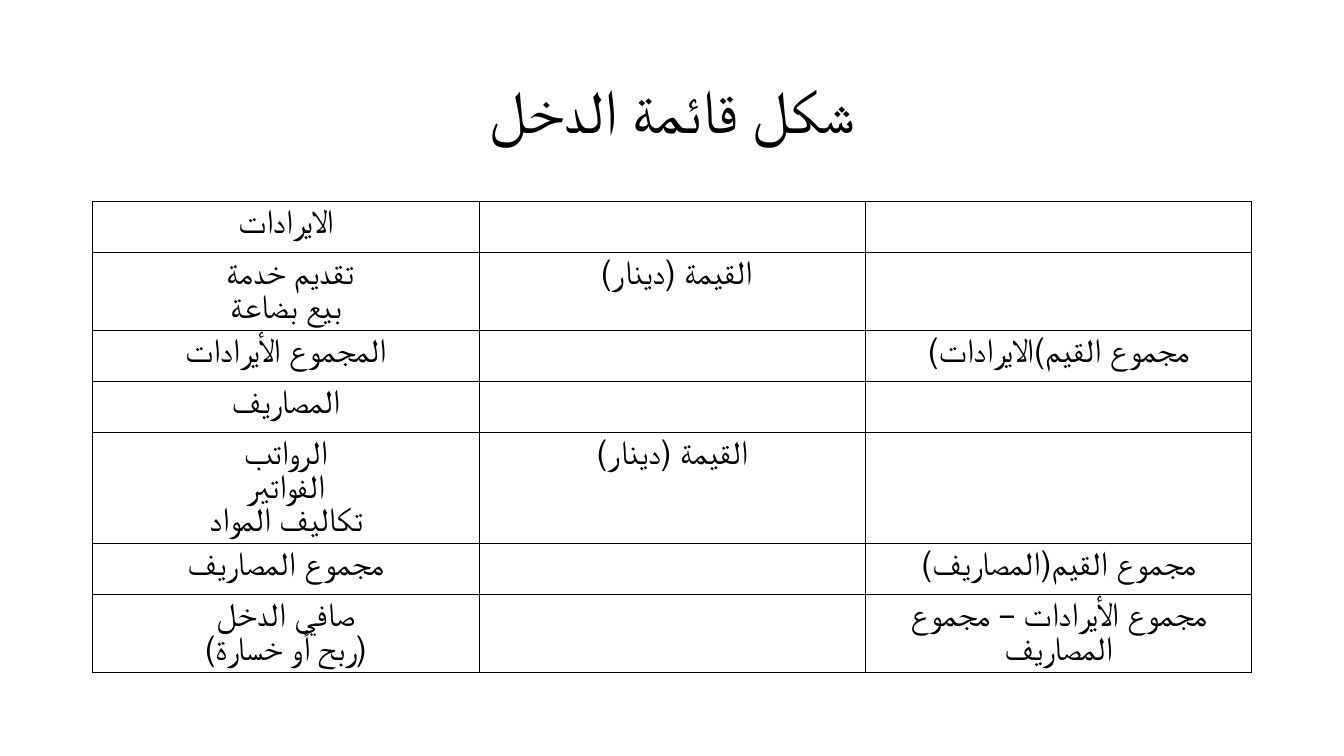
from dataclasses import dataclass
from lxml.etree import SubElement
from pptx import Presentation
from pptx.dml.color import RGBColor
from pptx.enum.text import MSO_ANCHOR as Anchor, PP_ALIGN as Align
from pptx.oxml import parse_xml
from pptx.oxml.ns import nsdecls, qn
from pptx.util import Pt

TITLE = "شكل قائمة الدخل"
STATEMENT = [
    (["الايرادات"], "", ""),
    (["تقديم خدمة ", "بيع بضاعة"], "القيمة (دينار) ", ""),
    (["المجموع الأيرادات"], "", "مجموع القيم)الايرادات)"),
    (["المصاريف"], "", ""),
    (["الرواتب", "الفواتير", "تكاليف المواد"], "القيمة (دينار)", ""),
    (["مجموع المصاريف"], "", "مجموع القيم(المصاريف)"),
    (["صافي الدخل", "(ربح أو خسارة)"], "", "مجموع الأيرادات – مجموع المصاريف"),
]


@dataclass(frozen=True)
class Theme:
    font: str = "Calibri"
    ink: str = "000000"
    title_size: int = 44
    body_size: int = 24
    border: int = 1


theme = Theme()
LEFT, WIDTH = 66.24, 828
TITLE_TOP, TITLE_HEIGHT = 28.8, 104.4
TABLE_TOP = 144
SINGLE_ROW, LINE_HEIGHT, CELL_MARGINS = 36.6, 23.9, 7.2


def format_paragraph(paragraph, size):
    paragraph.alignment = Align.CENTER
    paragraph.font.name = theme.font
    paragraph.font.size = Pt(size)
    paragraph.font.color.rgb = RGBColor.from_string(theme.ink)
    paragraph._p.get_or_add_pPr().set("rtl", "1")


def add_borders(cell):
    properties = cell._tc.get_or_add_tcPr()
    for position, side in enumerate(("lnL", "lnR", "lnT", "lnB")):
        properties.insert(position, parse_xml(
            f'<a:{side} {nsdecls("a")} w="{Pt(theme.border)}"><a:solidFill>'
            f'<a:srgbClr val="{theme.ink}"/></a:solidFill></a:{side}>'))


def fill_cell(cell, lines):
    cell.fill.background()
    add_borders(cell)
    cell.text = "\n".join(lines)
    for paragraph in cell.text_frame.paragraphs:
        format_paragraph(paragraph, theme.body_size)
        if not paragraph.runs:
            end = SubElement(paragraph._p, qn("a:endParaRPr"))
            end.set("sz", str(theme.body_size * 100))


def row_height(labels):
    return max(SINGLE_ROW, CELL_MARGINS + LINE_HEIGHT * len(labels))


def add_title(slide):
    title = slide.shapes.title
    title.left, title.top = Pt(LEFT), Pt(TITLE_TOP)
    title.width, title.height = Pt(WIDTH), Pt(TITLE_HEIGHT)
    title.text_frame.text = TITLE
    title.text_frame.vertical_anchor = Anchor.MIDDLE
    heading = title.text_frame.paragraphs[0]
    heading.line_spacing = 0.9
    format_paragraph(heading, theme.title_size)


def add_statement(slide):
    heights = [row_height(labels) for labels, _, _ in STATEMENT]
    columns = len(STATEMENT[0])
    statement = slide.shapes.add_table(
        len(STATEMENT), columns, Pt(LEFT), Pt(TABLE_TOP), Pt(WIDTH), Pt(sum(heights))).table
    statement.first_row = statement.horz_banding = False
    for row, height, (labels, value, total) in zip(statement.rows, heights, STATEMENT):
        row.height = Pt(height)
        for cell, lines in zip(row.cells, (labels, [value], [total])):
            fill_cell(cell, lines)


def main():
    deck = Presentation()
    deck.slide_width, deck.slide_height = Pt(960), Pt(540)
    slide = deck.slides.add_slide(deck.slide_layouts[5])
    add_title(slide)
    add_statement(slide)
    deck.save("out.pptx")


if __name__ == "__main__":
    main()
